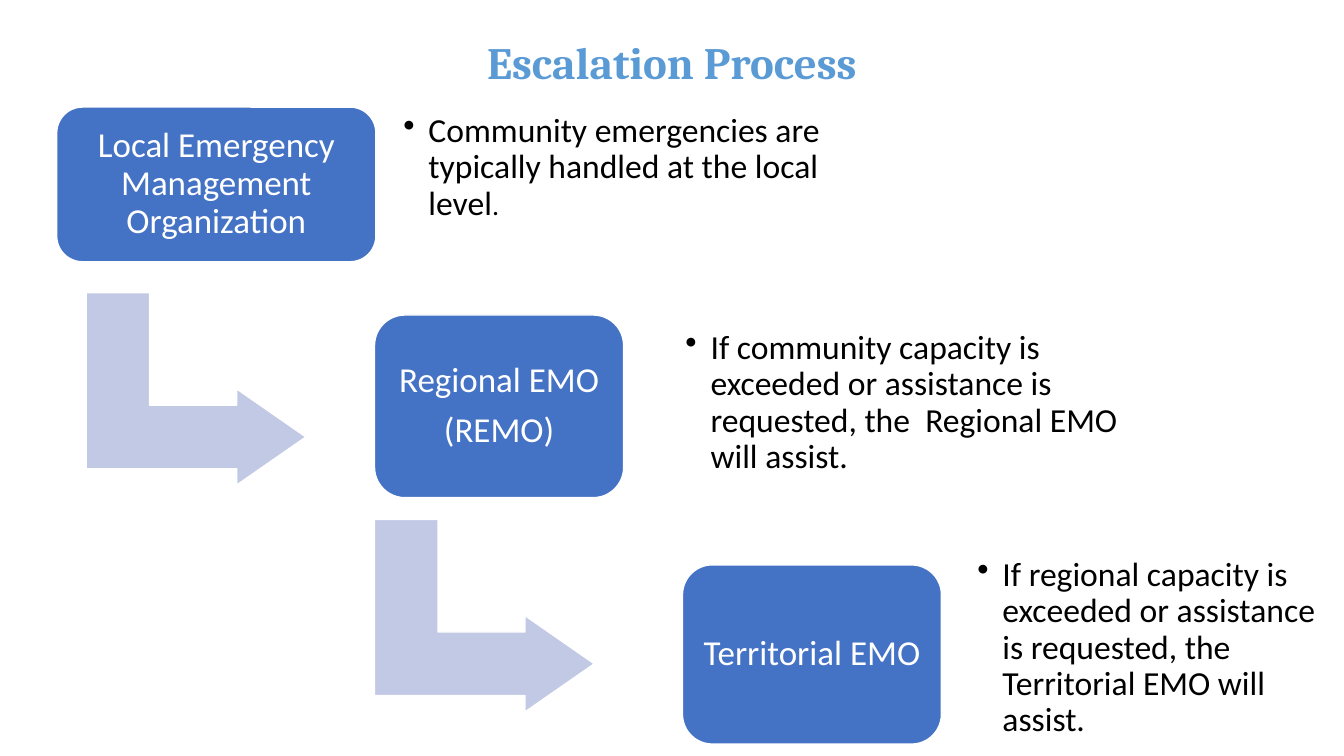
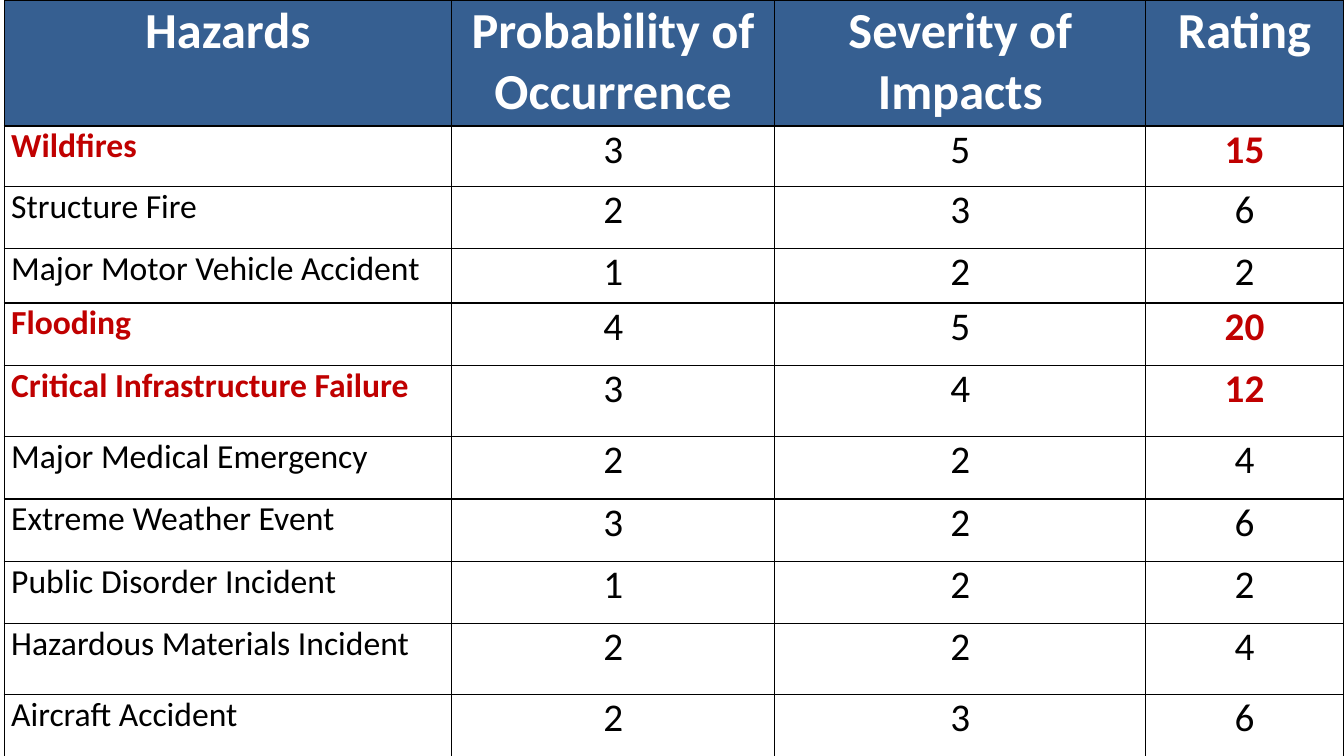
from lxml.etree import SubElement
from pptx import Presentation
from pptx.dml.color import RGBColor
from pptx.enum.shapes import MSO_SHAPE
from pptx.enum.text import MSO_ANCHOR, MSO_AUTO_SIZE, PP_ALIGN
from pptx.oxml.ns import qn
from pptx.util import Pt

COLORS = {
    "white": "FFFFFF", "black": "000000", "title": "5B9BD5", "step": "4472C4",
    "arrow": "C1C9E4", "header": "365F91", "alert": "C00000",
}
BODY_FONT, TITLE_FONT = "Calibri", "Cambria"
PAGE_WIDTH, PAGE_HEIGHT = 960, 540

STEPS = [
    ((40.5, 76.5, 228, 110.5), ["Local Emergency Management Organization"],
     (281, 54.5, 333, 131),
     [("Community emergencies are typically handled at the local level", 24), (".", 20)]),
    ((267.5, 225, 178, 130.5), ["Regional EMO", "(REMO)"],
     (482.5, 222.5, 333, 131),
     [("If community capacity is exceeded or assistance is requested, "
       "the  Regional EMO will assist.", 24)]),
    ((487.5, 403.5, 185, 128), ["Territorial EMO"],
     (691, 389.5, 269, 147),
     [("If regional capacity is exceeded or assistance is requested, "
       "the  Territorial EMO will assist.", 24)]),
]
FIRST_ARROW, ARROW_SHIFT = (61.5, 209, 157, 137.5), (206, 162)

HEADINGS = ["Hazards", "Probability of Occurrence", "Severity of Impacts", "Rating"]
HAZARDS = [
    ("Wildfires", 3, 5), ("Structure Fire", 2, 3), ("Major Motor Vehicle Accident", 1, 2),
    ("Flooding", 4, 5), ("Critical Infrastructure Failure", 3, 4),
    ("Major Medical Emergency", 2, 2), ("Extreme Weather Event", 3, 2),
    ("Public Disorder Incident", 1, 2), ("Hazardous Materials Incident", 2, 2),
    ("Aircraft Accident", 2, 3),
]
ALERT_RATING = 12
COLUMN_WIDTHS = [319.5, 231, 265, 141]
ROW_HEIGHTS = [90, 43, 44.5, 39, 44.5, 51, 44.5, 44.5, 44.5, 50.5, 44.5]


def color(name):
    """Return the named colour."""
    return RGBColor.from_string(COLORS[name])


def place(box):
    """Turn a box given in points into lengths."""
    return [Pt(value) for value in box]


def style_font(font, size, tint, bold=False, name=BODY_FONT):
    """Set the look of a font."""
    font.name, font.size, font.bold = name, Pt(size), bold
    font.color.rgb = color(tint)


def set_margins(holder, side, end):
    """Set the side and end margins of a text frame or cell."""
    holder.margin_left = holder.margin_right = Pt(side)
    holder.margin_top = holder.margin_bottom = Pt(end)


def add_figure(page, kind, box, tint):
    """Add a filled shape with a thin white outline."""
    figure = page.shapes.add_shape(kind, *place(box))
    figure.shadow.inherit = False
    figure.fill.solid()
    figure.fill.fore_color.rgb = color(tint)
    figure.line.color.rgb = color("white")
    figure.line.width = Pt(1)
    return figure


def add_title(page, box, text):
    """Add the centred slide title."""
    frame = page.shapes.add_textbox(*place(box)).text_frame
    frame.word_wrap = True
    frame.auto_size = MSO_AUTO_SIZE.SHAPE_TO_FIT_TEXT
    para = frame.paragraphs[0]
    para.text, para.alignment = text, PP_ALIGN.CENTER
    style_font(para.font, 32, "title", True, TITLE_FONT)


def add_step(page, box, lines):
    """Add a rounded step box with centred lines."""
    step = add_figure(page, MSO_SHAPE.ROUNDED_RECTANGLE, box, "step")
    frame = step.text_frame
    frame.word_wrap, frame.vertical_anchor = True, MSO_ANCHOR.MIDDLE
    set_margins(frame, 7.2, 7.2)
    frame.text = "\n".join(lines)
    for para in frame.paragraphs:
        para.alignment, para.line_spacing = PP_ALIGN.CENTER, 0.9
        para.space_after = Pt(8.75)
        style_font(para.font, 25, "white")


def add_caption(page, box, spans):
    """Add a bulleted explanation made of sized spans."""
    frame = page.shapes.add_textbox(*place(box)).text_frame
    frame.word_wrap, frame.vertical_anchor = True, MSO_ANCHOR.MIDDLE
    set_margins(frame, 7.2, 7.2)
    para = frame.paragraphs[0]
    para.line_spacing, para.space_after = 0.9, Pt(3.6)
    properties = para._p.get_or_add_pPr()
    properties.set("marL", str(Pt(18)))
    properties.set("indent", str(Pt(-18)))
    SubElement(properties, qn("a:buChar"), char="•")
    for text, size in spans:
        span = para.add_run()
        span.text = text
        style_font(span.font, size, "black")


def add_bent_arrow(page, box):
    """Add an arrow running down and then right inside the box."""
    left, top, width, height = box
    shift = (width - height) / 2
    arrow = add_figure(page, MSO_SHAPE.BENT_UP_ARROW,
                       (left + shift, top - shift, height, width), "arrow")
    arrow.rotation = 90
    for index, value in enumerate((0.33, 0.25, 0.36)):
        arrow.adjustments[index] = value


def build_escalation(page):
    """Build the staircase of escalation steps."""
    left, top, width, height = FIRST_ARROW
    for index in range(len(STEPS) - 1):
        add_bent_arrow(page, (left + index * ARROW_SHIFT[0],
                              top + index * ARROW_SHIFT[1], width, height))
    for step_box, lines, caption_box, spans in STEPS:
        add_step(page, step_box, lines)
        add_caption(page, caption_box, spans)
    add_title(page, (0, 21, PAGE_WIDTH, 46), "Escalation Process")


def add_borders(cell):
    """Draw a thin black line on each side of a cell."""
    properties = cell._tc.get_or_add_tcPr()
    for side in ("a:lnL", "a:lnR", "a:lnT", "a:lnB"):
        line = SubElement(properties, qn(side), w=str(Pt(1)))
        fill = SubElement(line, qn("a:solidFill"))
        SubElement(fill, qn("a:srgbClr"), val=COLORS["black"])


def fill_cell(cell, text, size, tint, bold, alignment, fill=None):
    """Write and style one table cell."""
    set_margins(cell, 5, 0)
    add_borders(cell)
    if fill:
        cell.fill.solid()
        cell.fill.fore_color.rgb = color(fill)
    else:
        cell.fill.background()
    para = cell.text_frame.paragraphs[0]
    para.text, para.alignment, para.space_before = str(text), alignment, Pt(6)
    style_font(para.font, size, tint, bold)


def build_hazards(page, box):
    """Build the table of hazards, rating each by probability times severity."""
    table = page.shapes.add_table(len(HAZARDS) + 1, len(HEADINGS), *place(box)).table
    table.horz_banding = table.first_row = False
    for column, width in zip(table.columns, COLUMN_WIDTHS):
        column.width = Pt(width)
    for row, height in zip(table.rows, ROW_HEIGHTS):
        row.height = Pt(height)
    for index, heading in enumerate(HEADINGS):
        fill_cell(table.cell(0, index), heading, 36, "white", True, PP_ALIGN.CENTER, "header")
    for row, (hazard, probability, severity) in enumerate(HAZARDS, 1):
        rating = probability * severity
        alert = rating >= ALERT_RATING
        for index, value in enumerate((hazard, probability, severity, rating)):
            marked = alert and index in (0, 3)
            fill_cell(table.cell(row, index), value, 28 if index else 24,
                      "alert" if marked else "black", marked,
                      PP_ALIGN.CENTER if index else PP_ALIGN.LEFT)


def main():
    """Build and save the deck."""
    deck = Presentation()
    deck.slide_width, deck.slide_height = Pt(PAGE_WIDTH), Pt(PAGE_HEIGHT)
    blank = deck.slide_layouts[6]
    build_escalation(deck.slides.add_slide(blank))
    build_hazards(deck.slides.add_slide(blank), (3, 0, sum(COLUMN_WIDTHS), sum(ROW_HEIGHTS)))
    deck.save("out.pptx")


if __name__ == "__main__":
    main()
